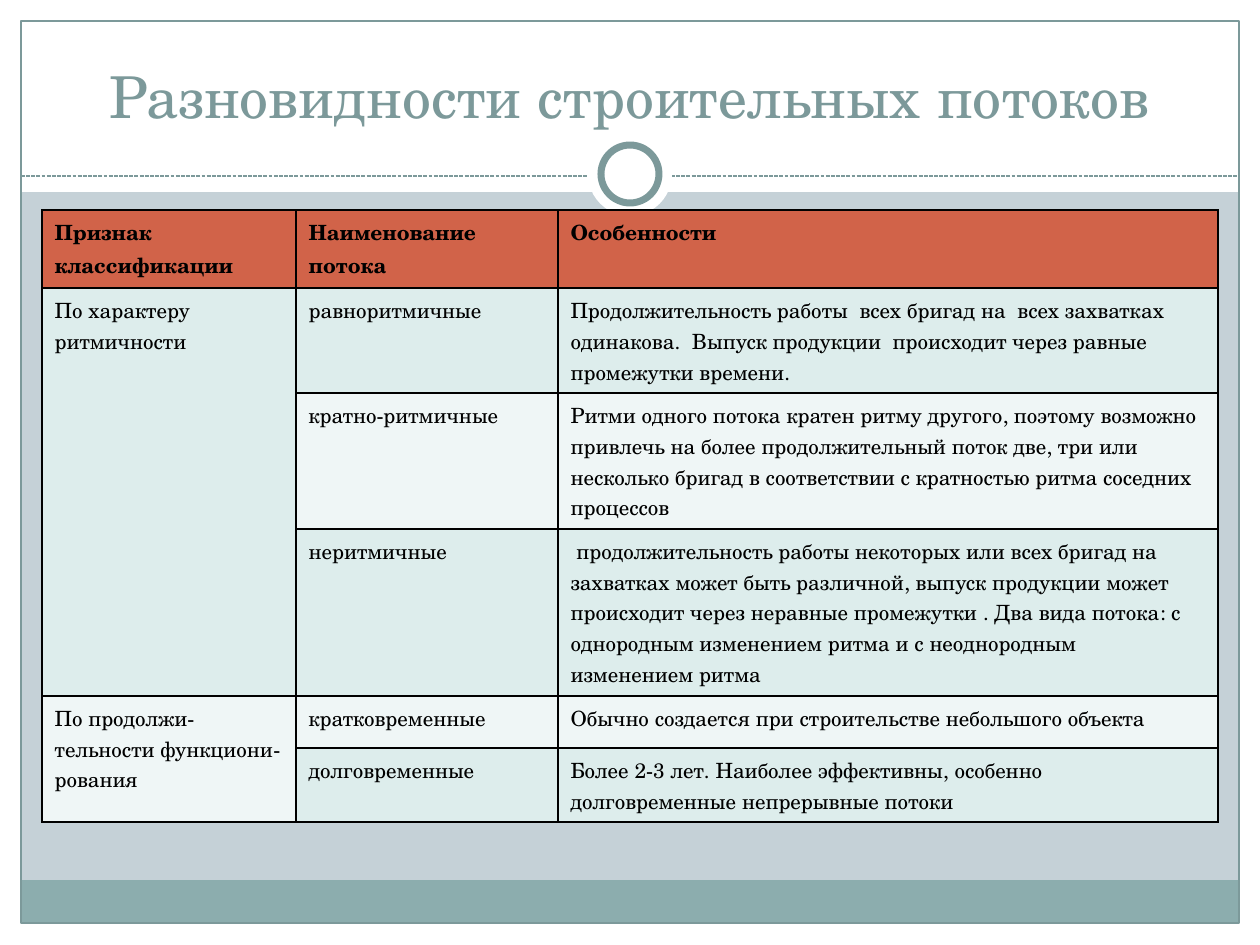
from dataclasses import dataclass

from lxml import etree
from pptx import Presentation
from pptx.dml.color import RGBColor
from pptx.enum.dml import MSO_LINE
from pptx.enum.shapes import MSO_CONNECTOR, MSO_SHAPE
from pptx.enum.text import MSO_ANCHOR, PP_ALIGN
from pptx.oxml.ns import qn
from pptx.util import Emu, Pt

PX = 914400 / 126
RECT = MSO_SHAPE.RECTANGLE
OVAL = MSO_SHAPE.OVAL
STRAIGHT = MSO_CONNECTOR.STRAIGHT
DASH = MSO_LINE.SQUARE_DOT
BOTTOM = MSO_ANCHOR.BOTTOM
CENTER = PP_ALIGN.CENTER

WHITE = "FFFFFF"
BLACK = "000000"
TEAL = "7C999A"
FOOTER = "8CADAE"
BACKDROP = "C5D1D7"
HEADER = "D16349"
BANDS = ["DDEDEC", "EFF6F6"]


def px(*lengths):
    return [Emu(round(length * PX)) for length in lengths]


def rgb(value):
    return RGBColor.from_string(value)


@dataclass
class SlideBuilder:
    slide: object
    font: str = "TeX Gyre Schola"

    def backdrop(self, color):
        fill = self.slide.background.fill
        fill.solid()
        fill.fore_color.rgb = rgb(color)

    def shape(self, kind, box, fill=None, line=None, weight=0.75):
        shape = self.slide.shapes.add_shape(kind, *px(*box))
        shape.shadow.inherit = False
        if fill:
            shape.fill.solid()
            shape.fill.fore_color.rgb = rgb(fill)
        else:
            shape.fill.background()
        if line:
            shape.line.color.rgb = rgb(line)
            shape.line.width = Pt(weight)
        else:
            shape.line.fill.background()

    def dashed_line(self, ends, color, weight=0.75):
        line = self.slide.shapes.add_connector(STRAIGHT, *px(*ends))
        line.line.color.rgb = rgb(color)
        line.line.width = Pt(weight)
        line.line.dash_style = DASH
        etree.SubElement(line._element.spPr, qn("a:effectLst"))

    def run(self, paragraph, text, size, color, bold=False):
        run = paragraph.add_run()
        run.text = text
        run.font.name = self.font
        run.font.size = Pt(size)
        run.font.bold = bold
        run.font.color.rgb = rgb(color)

    def title(self, box, text, size, color):
        frame = self.slide.shapes.add_textbox(*px(*box)).text_frame
        frame.word_wrap = True
        frame.vertical_anchor = BOTTOM
        frame.paragraphs[0].alignment = CENTER
        self.run(frame.paragraphs[0], text, size, color)

    def borders(self, cell, color, weight=1):
        properties = cell._tc.get_or_add_tcPr()
        for position, side in enumerate(("lnL", "lnR", "lnT", "lnB")):
            line = etree.Element(qn(f"a:{side}"), w=str(Pt(weight)))
            fill = etree.SubElement(line, qn("a:solidFill"))
            etree.SubElement(fill, qn("a:srgbClr"), val=color)
            properties.insert(position, line)

    def table(self, left, top, widths, heights, rows, merges, size=12):
        box = px(left, top, sum(widths), sum(heights))
        table = self.slide.shapes.add_table(len(rows), len(widths), *box).table
        table.first_row = table.horz_banding = False
        for column, width in zip(table.columns, px(*widths)):
            column.width = width
        for row, height in zip(table.rows, px(*heights)):
            row.height = height
        for r, texts in enumerate(rows):
            for c, text in enumerate(texts):
                cell = table.cell(r, c)
                cell.fill.solid()
                cell.fill.fore_color.rgb = rgb(BANDS[(r - 1) % 2] if r else HEADER)
                self.borders(cell, BLACK)
                if text:
                    paragraph = cell.text_frame.paragraphs[0]
                    self.run(paragraph, text, size, BLACK, bold=r == 0)
        for first, last in merges:
            table.cell(first, 0).merge(table.cell(last, 0))


FLOWS = [
    ("Признак классификации", "Наименование  потока", "Особенности"),
    ("По характеру ритмичности", "равноритмичные",
     "Продолжительность работы  всех бригад на  всех захватках одинакова.  "
     "Выпуск продукции  происходит через равные промежутки времени."),
    ("", "кратно-ритмичные",
     "Ритми одного потока кратен ритму другого, поэтому возможно привлечь на более "
     "продолжительный поток две, три или несколько бригад в соответствии с "
     "кратностью ритма соседних процессов"),
    ("", "неритмичные",
     " продолжительность работы некоторых или всех бригад на захватках может быть "
     "различной, выпуск продукции может происходит через неравные промежутки . "
     "Два вида потока: с однородным изменением ритма и с неоднородным изменением ритма"),
    ("По продолжи-тельности функциони-рования", "кратковременные",
     "Обычно создается при строительстве небольшого объекта"),
    ("", "долговременные",
     "Более 2-3 лет. Наиболее эффективны, особенно долговременные непрерывные потоки"),
]


def main():
    deck = Presentation()
    deck.slide_width, deck.slide_height = px(1260, 945)
    builder = SlideBuilder(deck.slides.add_slide(deck.slide_layouts[6]))

    builder.backdrop(BACKDROP)
    margins = [(0, 924, 1260, 21), (0, 0, 1260, 192), (0, 0, 21, 945), (1239, 0, 21, 945)]
    for margin in margins:
        builder.shape(RECT, margin, WHITE)
    builder.shape(RECT, (21, 880, 1218, 43), FOOTER)
    builder.shape(RECT, (21, 21, 1218, 902), line=TEAL)
    builder.dashed_line((21, 176, 1239, 176), TEAL)
    builder.shape(OVAL, (588, 132, 84, 84), WHITE)
    builder.shape(OVAL, (601, 145, 58, 58), WHITE, TEAL, 4)

    builder.title((42, 32, 1176, 104), "Разновидности строительных потоков", 33, TEAL)
    builder.table(42, 210, [254, 262, 660], [78, 105, 136, 167, 52, 74],
                  FLOWS, merges=[(1, 3), (4, 5)])
    deck.save("out.pptx")


if __name__ == "__main__":
    main()
